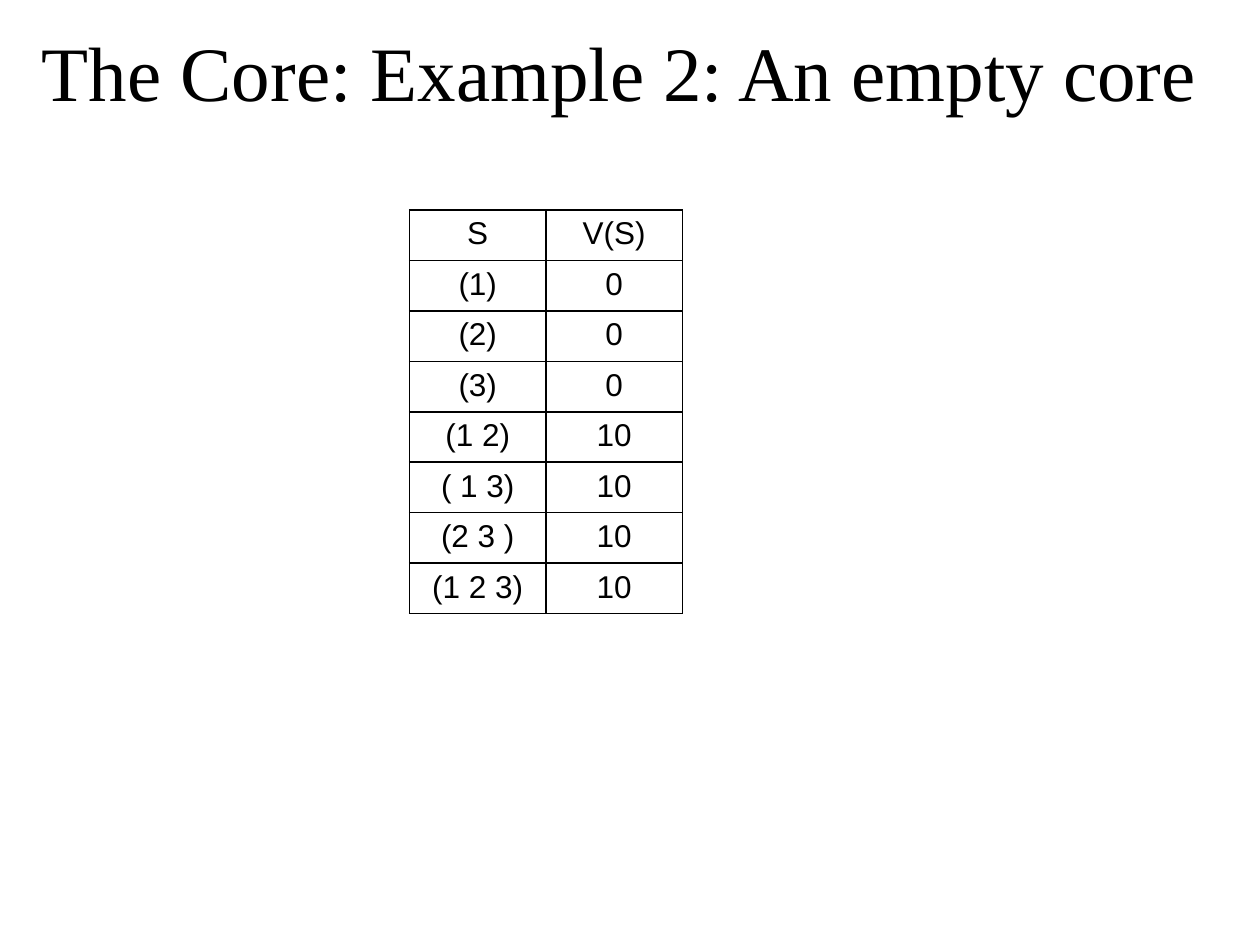
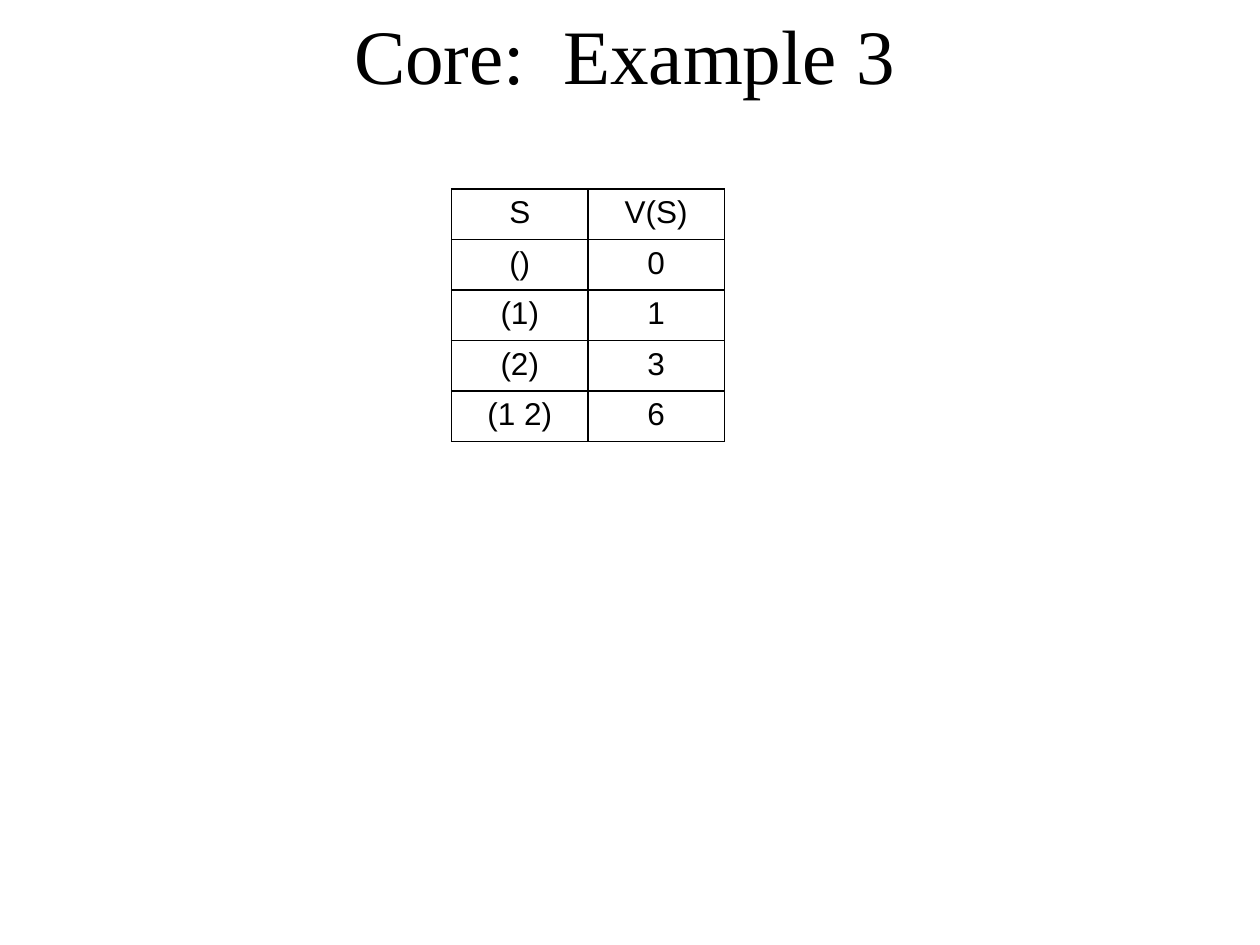
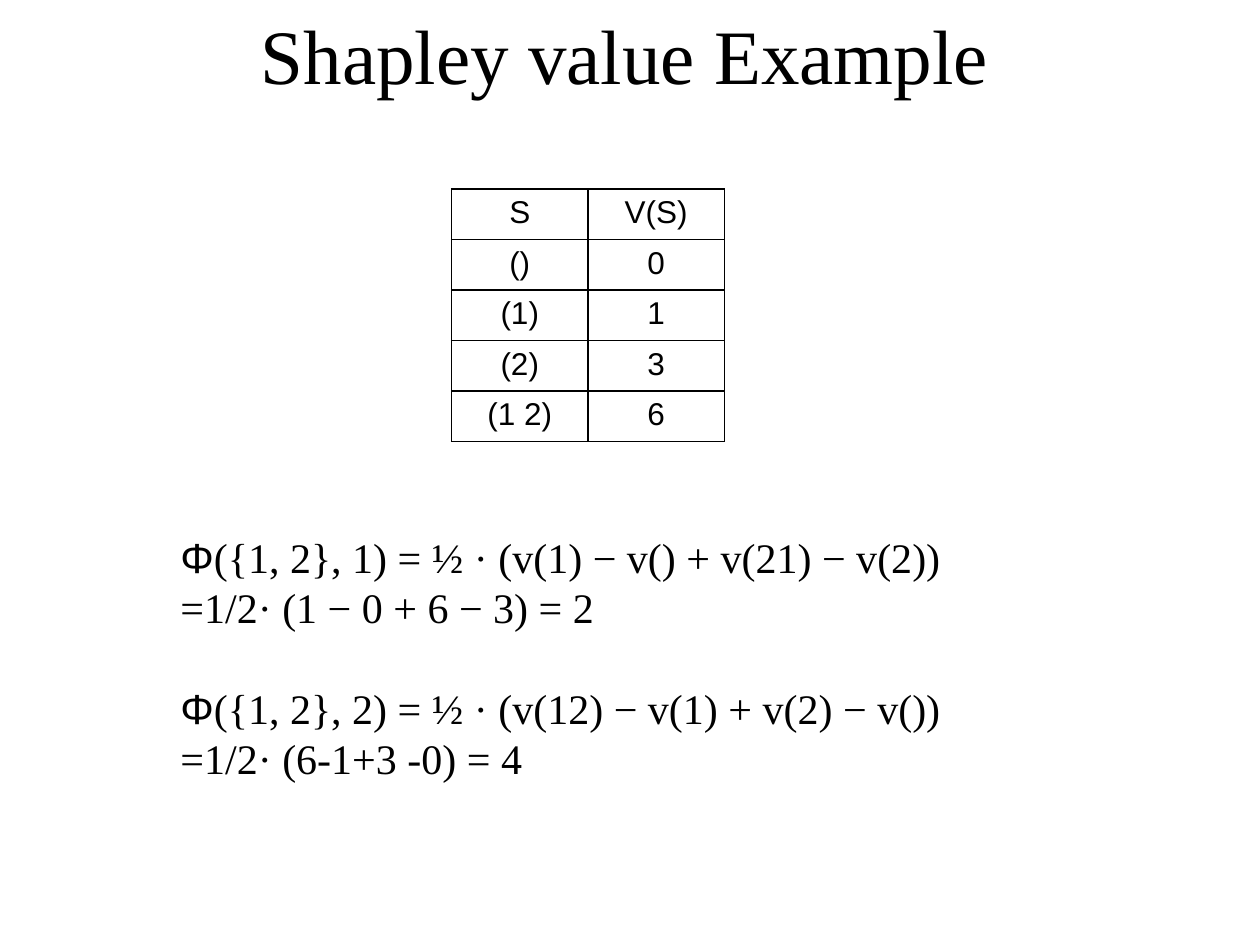
import pptx
import pptx.dml.color
import pptx.enum.text
import pptx.oxml
import pptx.oxml.ns
import pptx.util

COLORS = {"ink": "000000", "paper": "FFFFFF"}
SERIF, SANS = "Times New Roman", "Arial"
COLUMNS, ROWS = 120, 90
CENTER = pptx.enum.text.PP_ALIGN.CENTER


class Deck:
    """Draws styled titles, tables and formulas on a grid of 120 by 90 cells."""

    def __init__(self):
        self.prs = pptx.Presentation()
        self.prs.slide_width = pptx.util.Inches(10)
        self.prs.slide_height = pptx.util.Inches(7.5)
        self.slide = None

    def x(self, columns):
        return round(self.prs.slide_width * columns / COLUMNS)

    def y(self, rows):
        return round(self.prs.slide_height * rows / ROWS)

    def color(self, name):
        return pptx.dml.color.RGBColor.from_string(COLORS[name])

    def new_slide(self):
        self.slide = self.prs.slides.add_slide(self.prs.slide_layouts[6])
        self.slide.background.fill.solid()
        self.slide.background.fill.fore_color.rgb = self.color("paper")

    def run(self, paragraph, text, size, font):
        run = paragraph.add_run()
        run.text = text
        run.font.size = pptx.util.Pt(size)
        run.font.name = font
        run.font.color.rgb = self.color("ink")

    def frame(self, left, top, width, height):
        box = self.slide.shapes.add_textbox(
            self.x(left), self.y(top), self.x(width), self.y(height))
        box.text_frame.word_wrap = True
        return box.text_frame

    def title(self, text, left=7, width=105, height=9.4):
        frame = self.frame(left, 0.4, width, height)
        frame.vertical_anchor = pptx.enum.text.MSO_ANCHOR.MIDDLE
        heading = frame.paragraphs[0]
        heading.alignment = CENTER
        self.run(heading, text, 44, SERIF)

    def border(self, cell):
        properties = cell._tc.get_or_add_tcPr()
        for position, side in enumerate(("lnL", "lnR", "lnT", "lnB")):
            properties.insert(position, pptx.oxml.parse_xml(
                f'<a:{side} {pptx.oxml.ns.nsdecls("a")} w="12700"><a:solidFill>'
                f'<a:srgbClr val="{COLORS["ink"]}"/></a:solidFill></a:{side}>'))

    def coalition_table(self, values, left=43, top=18, column=13, row=4.8):
        entries = [("S", "V(S)"), *values]
        table = self.slide.shapes.add_table(
            len(entries), 2, self.x(left), self.y(top),
            self.x(2 * column), self.y(row * len(entries))).table
        table.first_row = table.horz_banding = False
        for r, entry in enumerate(entries):
            for c, text in enumerate(entry):
                cell = table.cell(r, c)
                cell.fill.background()
                self.border(cell)
                paragraph = cell.text_frame.paragraphs[0]
                paragraph.alignment = CENTER
                self.run(paragraph, text, 18, SANS)

    def formulas(self, derivations, pitch=28.8):
        frame = self.frame(16, 50, 87, 29.5)
        for number, (definition, result) in enumerate(derivations):
            first = frame.add_paragraph() if number else frame.paragraphs[0]
            if number:
                first.space_before = pptx.util.Pt(pitch)
            self.run(first, "Φ", 24, SANS)
            self.run(first, definition, 24, SERIF)
            second = frame.add_paragraph()
            self.run(second, result, 24, SERIF)
            for line in (first, second):
                line.line_spacing = pptx.util.Pt(pitch)


def main():
    deck = Deck()
    two_players = [("()", "0"), ("(1)", "1"), ("(2)", "3"), ("(1 2)", "6")]

    deck.new_slide()
    deck.title("The Core: Example 2: An empty core", left=0, width=118, height=12.6)
    singles = [(s, "0") for s in ("(1)", "(2)", "(3)")]
    larger = [(s, "10") for s in ("(1 2)", "( 1 3)", "(2 3 )", "(1 2 3)")]
    deck.coalition_table(singles + larger, left=39, top=20)

    for heading in ("Core:  Example 3", "Shapley value Example"):
        deck.new_slide()
        deck.title(heading)
        deck.coalition_table(two_players)

    deck.formulas([
        ("({1, 2}, 1) = ½ · (v(1) − v() + v(21) − v(2))", "=1/2· (1 − 0 + 6 − 3) = 2"),
        ("({1, 2}, 2) = ½ · (v(12) − v(1) + v(2) − v())", "=1/2· (6-1+3 -0) = 4"),
    ])
    deck.prs.save("out.pptx")


if __name__ == "__main__":
    main()
